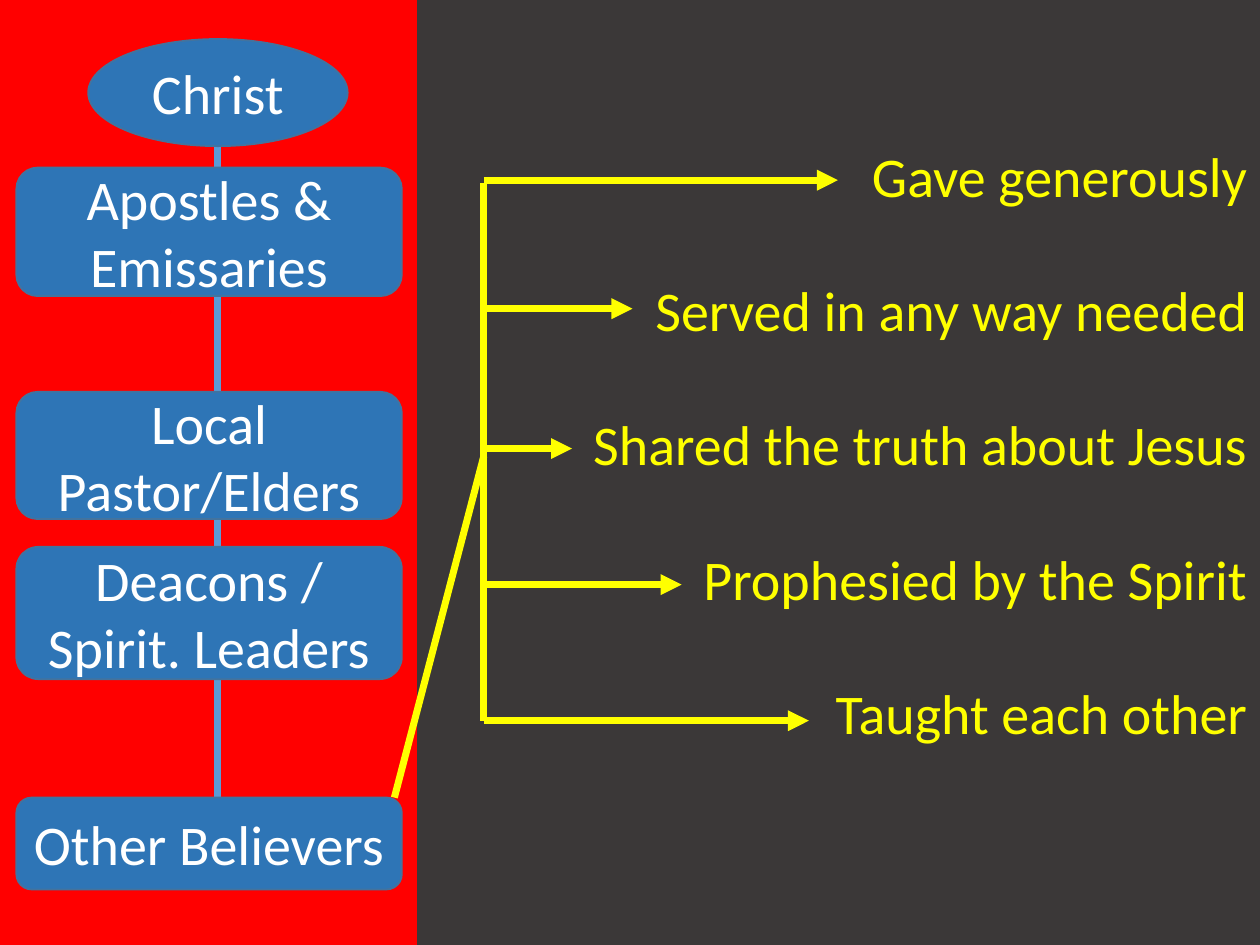
from pptx import Presentation
from pptx.dml.color import RGBColor
from pptx.enum.shapes import MSO_CONNECTOR, MSO_SHAPE
from pptx.enum.text import MSO_ANCHOR, PP_ALIGN
from pptx.oxml.ns import qn
from pptx.util import Inches, Pt
from lxml.etree import SubElement

THEME = {
    "background": "FF0000", "panel": "3B3838", "node": "2E75B6",
    "node_line": "43739E", "chain": "5B9BD5", "accent": "FFFF00",
    "node_text": "FFFFFF", "font": "Calibri", "size": 32,
    "outline": 1, "stroke": 4, "blank_line": 38.4,
}

NODE_LEFT, NODE_WIDTH = 0.13, 3.06
LEVELS = [
    ("Other Believers", 6.33, 0.73),
    ("Local Pastor/Elders", 3.11, 1.01),
    ("Deacons / Spirit. Leaders", 4.34, 1.05),
    ("Apostles & Emissaries", 1.33, 1.02),
]
ACTIONS = [
    ("Gave generously", 1.43, 6.65),
    ("Served in any way needed", 2.45, 5.02),
    ("Shared the truth about Jesus", 3.56, 4.54),
    ("Prophesied by the Spirit", 4.64, 5.41),
    ("Taught each other", 5.72, 6.42),
]
CHAIN_X, TRUNK_X = 1.73, 3.84


def color(name):
    return RGBColor.from_string(THEME[name])


def add_box(page, kind, left, top, width, height, fill, outline=None):
    box = page.shapes.add_shape(
        kind, Inches(left), Inches(top), Inches(width), Inches(height))
    box.shadow.inherit = False
    box.fill.solid()
    box.fill.fore_color.rgb = color(fill)
    if outline:
        box.line.color.rgb = color(outline)
        box.line.width = Pt(THEME["outline"])
    else:
        box.line.fill.background()
    return box


def write(box, lines, ink, align, anchor, gap=0):
    frame = box.text_frame
    frame.word_wrap = True
    frame.vertical_anchor = anchor
    frame.text = "\n".join(lines)
    for para in frame.paragraphs:
        para.alignment = align
        para.space_after = Pt(gap)
        for span in para.runs:
            span.font.name = THEME["font"]
            span.font.size = Pt(THEME["size"])
            span.font.color.rgb = color(ink)


def add_node(page, kind, label, left, top, width, height):
    node = add_box(page, kind, left, top, width, height, "node", "node_line")
    write(node, [label], "node_text", PP_ALIGN.CENTER, MSO_ANCHOR.MIDDLE)


def add_line(page, start, end, ink, arrow=False):
    line = page.shapes.add_connector(
        MSO_CONNECTOR.STRAIGHT, *(Inches(value) for value in start + end))
    line.line.color.rgb = color(ink)
    line.line.width = Pt(THEME["stroke"])
    if arrow:
        SubElement(line.line._get_or_add_ln(), qn("a:tailEnd"), type="triangle")
    SubElement(line._element.spPr, qn("a:effectLst"))


def main():
    deck = Presentation()
    deck.slide_width, deck.slide_height = Inches(10), Inches(7.5)
    page = deck.slides.add_slide(deck.slide_layouts[6])
    page.background.fill.solid()
    page.background.fill.fore_color.rgb = color("background")

    panel = add_box(page, MSO_SHAPE.RECTANGLE, 3.31, 0, 6.69, 7.84, "panel")
    panel.text_frame.margin_top = Inches(1.12)
    write(panel, [label for label, _, _ in ACTIONS], "accent",
          PP_ALIGN.RIGHT, MSO_ANCHOR.TOP, THEME["blank_line"])

    add_line(page, (CHAIN_X, 1.16), (CHAIN_X, 6.58), "chain")
    add_node(page, MSO_SHAPE.OVAL, "Christ", 0.7, 0.31, 2.06, 0.85)
    for label, top, height in LEVELS:
        add_node(page, MSO_SHAPE.ROUNDED_RECTANGLE, label,
                 NODE_LEFT, top, NODE_WIDTH, height)

    add_line(page, (3.13, 6.33), (TRUNK_X, 3.62), "accent")
    add_line(page, (TRUNK_X, 5.72), (TRUNK_X, 1.45), "accent")
    for _, height, tip in ACTIONS:
        add_line(page, (TRUNK_X, height), (tip, height), "accent", arrow=True)

    deck.save("out.pptx")


if __name__ == "__main__":
    main()
